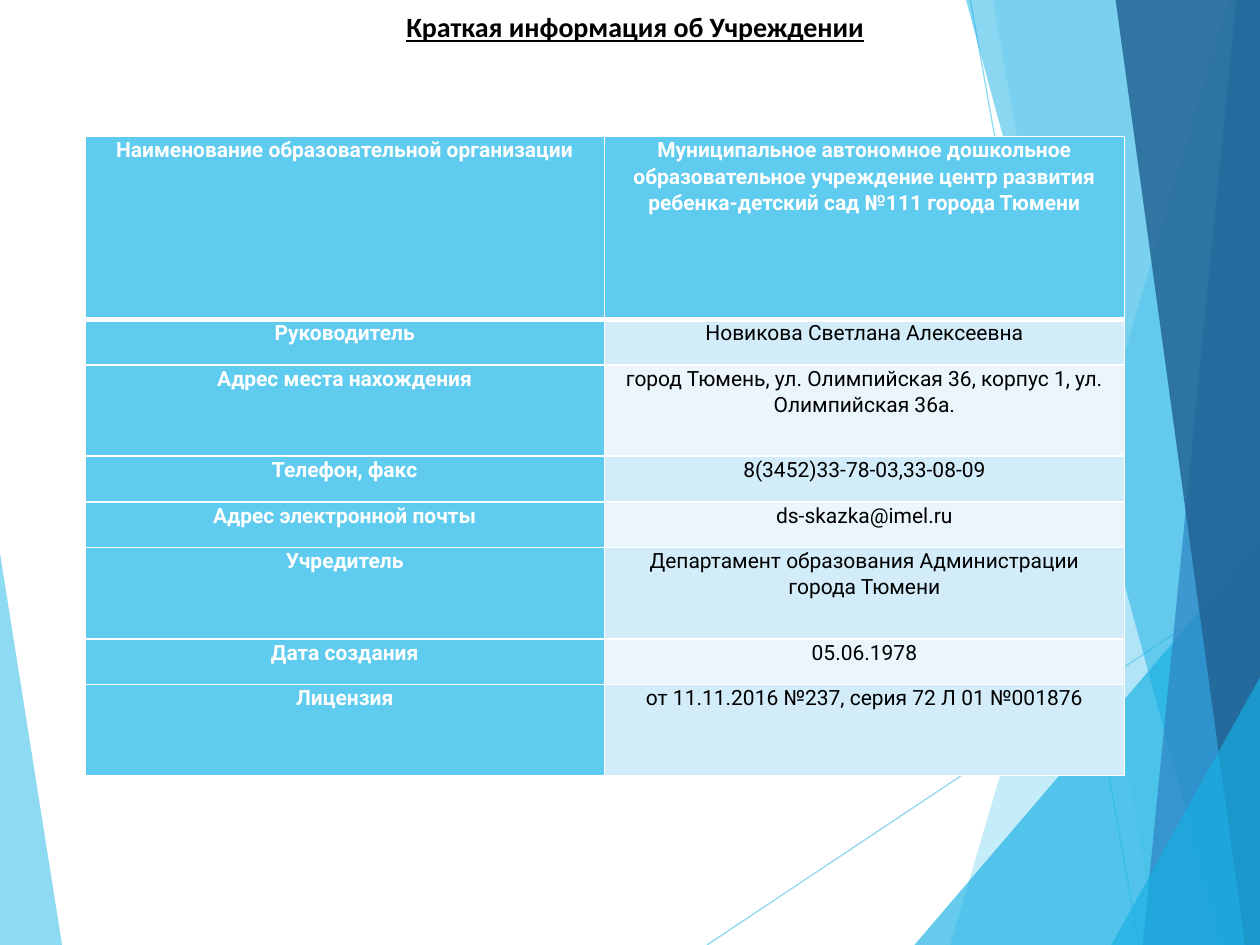
from lxml.etree import SubElement
from pptx import Presentation
from pptx.dml.color import RGBColor
from pptx.enum.shapes import MSO_CONNECTOR
from pptx.enum.text import MSO_ANCHOR, PP_ALIGN
from pptx.oxml.ns import qn
from pptx.util import Pt

WIDTH, HEIGHT = 720, 540
SKY, AQUA, BLUE, NAVY = "5FCBEF", "17B0E4", "2E83C3", "226292"
WHITE, BLACK = "FFFFFF", "000000"
BANDS = ("D2ECF9", "EAF6FC")
ROW_UNIT = 26.1

# Points, colour, opacity in percent
LEFT_FACET = ([(0, 316), (35.5, 540), (0, 540)], SKY, 70)
RIGHT_FACETS = [
    ([(702, 0), (543, 540), (720, 540), (720, 0)], SKY, 36),
    ([(567.5, 0), (661.5, 540), (720, 540), (720, 0)], SKY, 20),
    ([(522.5, 540), (720, 309), (720, 540)], AQUA, 66),
    ([(552, 0), (698.5, 540), (720, 540), (720, 0)], AQUA, 50),
    ([(706.5, 0), (653, 540), (720, 540), (720, 0)], BLUE, 70),
    ([(637.5, 0), (711.5, 540), (720, 540), (720, 0)], NAVY, 82),
    ([(635, 540), (720, 387), (720, 540)], AQUA, 66),
]
LINES = [((404, 540), (720, 329.5)), ((554.5, 0), (651, 540))]

# Label, value, row height in units
ROWS = [
    ("Наименование образовательной организации",
     "Муниципальное автономное дошкольное образовательное учреждение "
     "центр развития ребенка-детский сад №111 города Тюмени", 4),
    ("Руководитель", "Новикова Светлана Алексеевна", 1),
    ("Адрес места нахождения",
     "город Тюмень, ул. Олимпийская 36, корпус 1, ул. Олимпийская 36а.", 2),
    ("Телефон, факс", "8(3452)33-78-03,33-08-09", 1),
    ("Адрес электронной почты", "ds-skazka@imel.ru", 1),
    ("Учредитель", "Департамент образования Администрации города Тюмени", 2),
    ("Дата создания", "05.06.1978", 1),
    ("Лицензия", "от 11.11.2016 №237, серия 72 Л 01 №001876", 2),
]


def rgb(color):
    return RGBColor.from_string(color)


def set_fill(fill, color):
    fill.solid()
    fill.fore_color.rgb = rgb(color)


def set_opacity(element, percent):
    """Make the first colour inside the element translucent."""
    clr = next(element.iter(qn("a:srgbClr")))
    SubElement(clr, qn("a:alpha"), val=str(percent * 1000))


def add_facet(s, points, color, opacity):
    corners = [(Pt(x), Pt(y)) for x, y in points]
    builder = s.shapes.build_freeform(*corners[0])
    builder.add_line_segments(corners[1:], close=True)
    sp = builder.convert_to_shape()
    sp.shadow.inherit = False
    set_fill(sp.fill, color)
    set_opacity(sp.fill._xPr, opacity)
    sp.line.fill.background()


def add_line(s, start, end):
    line = s.shapes.add_connector(
        MSO_CONNECTOR.STRAIGHT, *(Pt(v) for v in (*start, *end)))
    line.line.width = Pt(0.75)
    set_fill(line.line.fill, SKY)
    spPr = line._element.spPr
    set_opacity(spPr, 70)
    SubElement(spPr, qn("a:effectLst"))


def set_font(p, name, size, color, bold):
    p.alignment = PP_ALIGN.CENTER
    font = p.font
    font.name, font.size, font.bold = name, Pt(size), bold
    font.color.rgb = rgb(color)


def set_margins(box, left, top, right, bottom):
    box.margin_left, box.margin_top = Pt(left), Pt(top)
    box.margin_right, box.margin_bottom = Pt(right), Pt(bottom)


def add_title(s, text):
    tf = s.shapes.add_textbox(Pt(54), Pt(4.3), Pt(618), Pt(43)).text_frame
    tf.word_wrap = True
    set_margins(tf, 0, 1.4, 0, 0)
    p = tf.paragraphs[0]
    p.text = text
    p.space_before = Pt(1.1)
    set_font(p, "Calibri", 16, BLACK, True)
    p.font.underline = True


def add_borders(cell, widths):
    """Draw white left, right, top and bottom borders, before any fill."""
    tcPr = cell._tc.get_or_add_tcPr()
    for side, width in zip("LRTB", widths):
        ln = SubElement(tcPr, qn(f"a:ln{side}"), w=str(Pt(width)))
        SubElement(SubElement(ln, qn("a:solidFill")), qn("a:srgbClr"), val=WHITE)


def fill_cell(cell, text, fill, color, bold, widths):
    add_borders(cell, widths)
    set_fill(cell.fill, fill)
    set_margins(cell, 5, 0, 5, 0)
    cell.vertical_anchor = MSO_ANCHOR.TOP
    p = cell.text_frame.paragraphs[0]
    p.text = text
    p.line_spacing = 1.07
    p.space_after = Pt(8)
    set_font(p, "Roboto", 12, color, bold)


def add_info_table(s):
    height = ROW_UNIT * sum(units for *_, units in ROWS)
    table = s.shapes.add_table(
        len(ROWS), 2, Pt(48.5), Pt(78), Pt(594), Pt(height)).table
    for i, (label, value, units) in enumerate(ROWS):
        table.rows[i].height = Pt(ROW_UNIT * units)
        widths = (1, 1, 3 if i == 1 else 1, 3 if i == 0 else 1)
        fill_cell(table.cell(i, 0), label, SKY, WHITE, True, widths)
        if i == 0:
            style = (SKY, WHITE, True)
        else:
            style = (BANDS[(i - 1) % 2], BLACK, False)
        fill_cell(table.cell(i, 1), value, *style, widths)


def main():
    prs = Presentation()
    prs.slide_width, prs.slide_height = Pt(WIDTH), Pt(HEIGHT)
    s = prs.slides.add_slide(prs.slide_layouts[6])
    add_facet(s, *LEFT_FACET)
    for start, end in LINES:
        add_line(s, start, end)
    for facet in RIGHT_FACETS:
        add_facet(s, *facet)
    add_title(s, "Краткая информация об Учреждении")
    add_info_table(s)
    prs.save("out.pptx")


if __name__ == "__main__":
    main()
